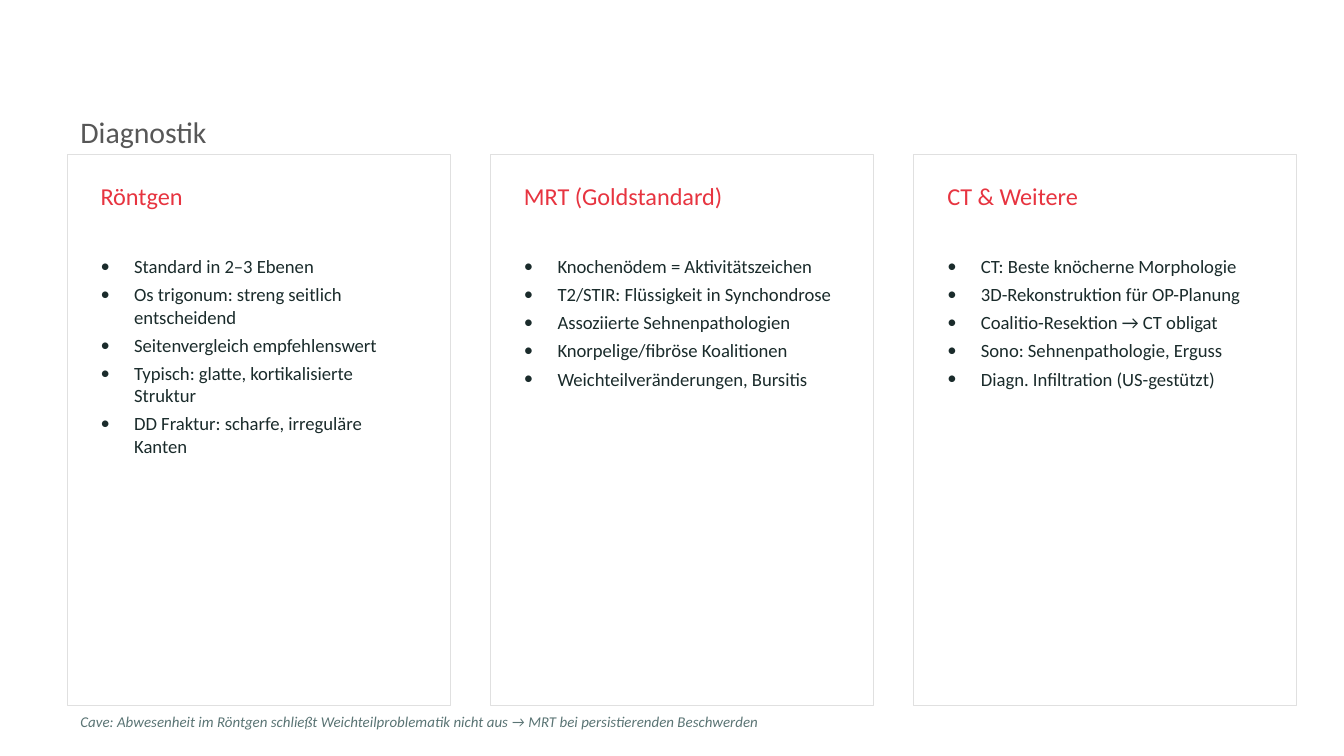
"""Build the slide "Diagnostik" with three cards of imaging findings."""
from lxml import etree
from pptx import Presentation
from pptx.dml.color import RGBColor
from pptx.enum.shapes import MSO_SHAPE
from pptx.enum.text import MSO_AUTO_SIZE
from pptx.oxml.ns import qn
from pptx.util import Inches, Pt

RECTANGLE = MSO_SHAPE.RECTANGLE
GROW = MSO_AUTO_SIZE.SHAPE_TO_FIT_TEXT

TITLE = "Diagnostik"
CARDS = [
    ("Röntgen", [
        "Standard in 2–3 Ebenen",
        "Os trigonum: streng seitlich entscheidend",
        "Seitenvergleich empfehlenswert",
        "Typisch: glatte, kortikalisierte Struktur",
        "DD Fraktur: scharfe, irreguläre Kanten",
    ]),
    ("MRT (Goldstandard)", [
        "Knochenödem = Aktivitätszeichen",
        "T2/STIR: Flüssigkeit in Synchondrose",
        "Assoziierte Sehnenpathologien",
        "Knorpelige/fibröse Koalitionen",
        "Weichteilveränderungen, Bursitis",
    ]),
    ("CT & Weitere", [
        "CT: Beste knöcherne Morphologie",
        "3D-Rekonstruktion für OP-Planung",
        "Coalitio-Resektion → CT obligat",
        "Sono: Sehnenpathologie, Erguss",
        "Diagn. Infiltration (US-gestützt)",
    ]),
]
CAVEAT = ("Cave: Abwesenheit im Röntgen schließt Weichteilproblematik nicht aus "
          "→ MRT bei persistierenden Beschwerden")

FONT = "Calibri"
WHITE = RGBColor(0xFF, 0xFF, 0xFF)
BORDER = RGBColor(0xE0, 0xE0, 0xE0)
GREY = RGBColor(0x57, 0x57, 0x57)
RED = RGBColor(0xE7, 0x34, 0x40)
INK = RGBColor(0x1A, 0x2B, 0x2B)
TEAL = RGBColor(0x5A, 0x74, 0x74)

SLIDE_WIDTH = 10
SLIDE_HEIGHT = SLIDE_WIDTH * 9 / 16
LEFT = 0.5
CARD_TOP, CARD_WIDTH, CARD_HEIGHT = 1.15, 2.85, 4.1
CARD_GAP, PADDING = 0.3, 0.15
INDENT = 0.25


def add_text(slide, box, lines, size, color, italic=False, bullets=False):
    frame = slide.shapes.add_textbox(*map(Inches, box)).text_frame
    frame.word_wrap = True
    frame.auto_size = GROW
    frame.text = "\n".join(lines)
    for paragraph in frame.paragraphs:
        if bullets:
            add_bullet(paragraph)
        for run in paragraph.runs:
            run.font.name = FONT
            run.font.size = Pt(size)
            run.font.color.rgb = color
            if italic:
                run.font.italic = True


def add_bullet(paragraph):
    paragraph.space_after = Pt(3)
    properties = paragraph._p.get_or_add_pPr()
    properties.set("marL", str(Inches(INDENT)))
    properties.set("indent", str(-Inches(INDENT)))
    etree.SubElement(properties, qn("a:buSzPct")).set("val", "100000")
    etree.SubElement(properties, qn("a:buFont")).set("typeface", FONT)
    etree.SubElement(properties, qn("a:buChar")).set("char", "•")


def add_card(slide, left, heading, findings):
    card = slide.shapes.add_shape(
        RECTANGLE, *map(Inches, (left, CARD_TOP, CARD_WIDTH, CARD_HEIGHT)))
    card.shadow.inherit = False
    card.fill.solid()
    card.fill.fore_color.rgb = WHITE
    card.line.color.rgb = BORDER
    card.line.width = Pt(0.5)
    text_left, text_width = left + PADDING, CARD_WIDTH - 2 * PADDING
    add_text(slide, (text_left, CARD_TOP + PADDING, text_width, 0.4), [heading], 13, RED)
    add_text(slide, (text_left, CARD_TOP + 0.7, text_width, 3.1), findings, 10, INK,
             bullets=True)


def main():
    deck = Presentation()
    deck.slide_width, deck.slide_height = Inches(SLIDE_WIDTH), Inches(SLIDE_HEIGHT)
    slide = deck.slides.add_slide(deck.slide_layouts[6])
    slide.background.fill.solid()
    slide.background.fill.fore_color.rgb = WHITE

    add_text(slide, (LEFT, 0.8, 9, 0.5), [TITLE], 16, GREY)
    for column, (heading, findings) in enumerate(CARDS):
        add_card(slide, LEFT + column * (CARD_WIDTH + CARD_GAP), heading, findings)
    add_text(slide, (LEFT, CARD_TOP + CARD_HEIGHT, 9, 0.35), [CAVEAT], 8, TEAL, italic=True)
    deck.save("out.pptx")


if __name__ == "__main__":
    main()
